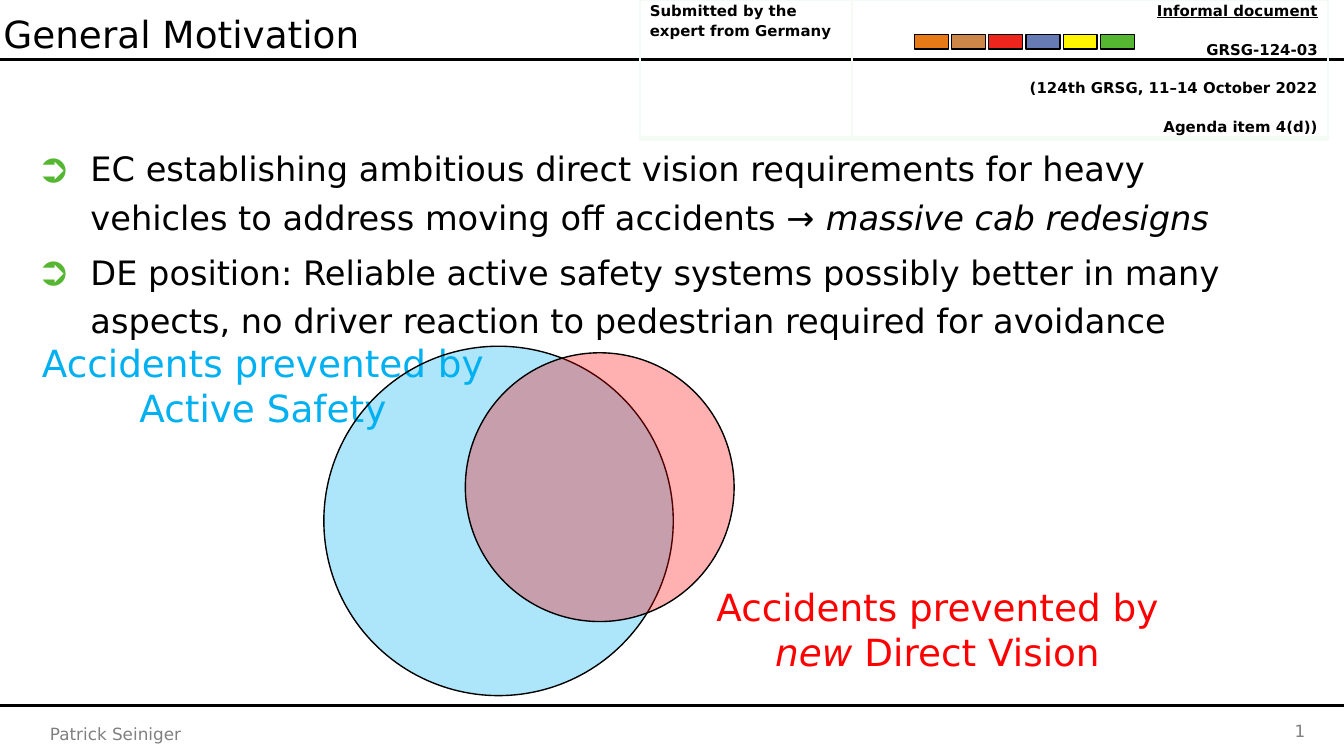
from dataclasses import dataclass

from lxml import etree
from pptx import Presentation
from pptx.dml.color import RGBColor
from pptx.enum.shapes import MSO_CONNECTOR as Connector, MSO_SHAPE as Preset
from pptx.enum.text import MSO_ANCHOR as Anchor, PP_ALIGN as Align
from pptx.oxml.ns import qn
from pptx.util import Pt

FONT = "DejaVu Sans"
BLACK, GRAY, BLUE, RED = "000000", "808080", "00B0F0", "FF0000"
GREEN, TABLE_EDGE = "55B631", "F4FAF4"
SLIDE_WIDTH, SLIDE_HEIGHT = 720, 405


@dataclass
class Run:
    text: str
    italic: bool = False
    underline: bool = False
    break_after: bool = False


@dataclass
class Style:
    size: float
    color: str = BLACK
    bold: bool = False
    align: Align = Align.LEFT
    line_spacing: float = 1.0
    space_after: float = 0


@dataclass
class TextBox:
    left: float
    top: float
    width: float
    height: float
    style: Style
    paragraphs: list[list[Run]]
    inset_left: float = 7.2
    wrap: bool = True
    bullet: str = ""


@dataclass
class Circle:
    left: float
    top: float
    diameter: float
    color: str
    opacity: int
    rotation: float = 0


def rgb(color: str) -> RGBColor:
    return RGBColor.from_string(color)


def add_runs(paragraph, runs: list[Run], style: Style) -> None:
    paragraph.alignment = style.align
    paragraph.line_spacing = style.line_spacing
    paragraph.space_after = Pt(style.space_after)
    for item in runs:
        run = paragraph.add_run()
        run.text = item.text
        run.font.name = FONT
        run.font.size = Pt(style.size)
        run.font.bold = style.bold
        run.font.italic = item.italic
        run.font.underline = item.underline
        run.font.color.rgb = rgb(style.color)
        if item.break_after:
            paragraph.add_line_break()


def set_indent(paragraph, left: float, first: float = 0) -> None:
    properties = paragraph._p.get_or_add_pPr()
    properties.set("marL", str(Pt(left)))
    properties.set("indent", str(Pt(first)))


def add_bullet(paragraph, character: str) -> None:
    set_indent(paragraph, 28.8, -28.8)
    properties = paragraph._p.get_or_add_pPr()
    color = etree.SubElement(properties, qn("a:buClr"))
    etree.SubElement(color, qn("a:srgbClr"), val=GREEN)
    etree.SubElement(properties, qn("a:buSzPct"), val="120000")
    etree.SubElement(properties, qn("a:buFont"), typeface=FONT)
    etree.SubElement(properties, qn("a:buChar"), char=character)


def next_paragraph(frame, index: int):
    return frame.add_paragraph() if index else frame.paragraphs[0]


def add_text(slide, box: TextBox) -> None:
    shape = slide.shapes.add_textbox(Pt(box.left), Pt(box.top), Pt(box.width), Pt(box.height))
    frame = shape.text_frame
    frame.word_wrap = box.wrap
    frame.vertical_anchor = Anchor.TOP
    frame.margin_left = Pt(box.inset_left)
    for index, runs in enumerate(box.paragraphs):
        paragraph = next_paragraph(frame, index)
        if box.bullet:
            add_bullet(paragraph, box.bullet)
            if index:
                paragraph.space_before = Pt(3.6)
        add_runs(paragraph, runs, box.style)


def add_rule(slide, top: float) -> None:
    rule = slide.shapes.add_connector(Connector.STRAIGHT, Pt(0), Pt(top), Pt(SLIDE_WIDTH), Pt(top))
    rule.line.color.rgb = rgb(BLACK)
    rule.line.width = Pt(1.5)
    etree.SubElement(rule._element.spPr, qn("a:effectLst"))


def add_outlined(slide, preset: Preset, left: float, top: float, width: float, height: float, color: str):
    shape = slide.shapes.add_shape(preset, Pt(left), Pt(top), Pt(width), Pt(height))
    shape.shadow.inherit = False
    shape.fill.solid()
    shape.fill.fore_color.rgb = rgb(color)
    shape.line.color.rgb = rgb(BLACK)
    shape.line.width = Pt(0.75)
    return shape


def add_circle(slide, circle: Circle) -> None:
    shape = add_outlined(slide, Preset.OVAL, circle.left, circle.top,
                         circle.diameter, circle.diameter, circle.color)
    shape.rotation = circle.rotation
    fill_color = shape._element.spPr.find(qn("a:solidFill")).find(qn("a:srgbClr"))
    etree.SubElement(fill_color, qn("a:alpha"), val=str(circle.opacity * 1000))


def add_borders(cell) -> None:
    properties = cell._tc.get_or_add_tcPr()
    for tag, width in (("a:lnL", 1), ("a:lnR", 1), ("a:lnT", 1), ("a:lnB", 3)):
        line = etree.SubElement(properties, qn(tag), w=str(Pt(width)))
        fill = etree.SubElement(line, qn("a:solidFill"))
        etree.SubElement(fill, qn("a:srgbClr"), val=TABLE_EDGE)


def add_document_table(slide) -> None:
    widths = (113.8, 254.9)
    submitted = [[Run("Submitted by the expert from Germany")]]
    document = [[Run("Informal document", underline=True)], [Run("GRSG-124-03")],
                [Run("(124th GRSG, 11–14 October 2022")], [Run("Agenda item 4(d))")]]
    columns = ((submitted, Align.LEFT, (0,)), (document, Align.RIGHT, (80, 80, 80, 108)))
    table = slide.shapes.add_table(1, 2, Pt(342.7), Pt(0), Pt(sum(widths)), Pt(73.4)).table
    table.first_row = table.horz_banding = False
    for index, (paragraphs, align, indents) in enumerate(columns):
        table.columns[index].width = Pt(widths[index])
        cell = table.cell(0, index)
        add_borders(cell)
        cell.fill.background()
        cell.margin_left = cell.margin_right = Pt(5.4)
        cell.margin_top = cell.margin_bottom = Pt(0)
        style = Style(8, bold=True, align=align, line_spacing=1.15, space_after=10)
        for row, (runs, indent) in enumerate(zip(paragraphs, indents)):
            paragraph = next_paragraph(cell.text_frame, row)
            set_indent(paragraph, indent)
            add_runs(paragraph, runs, style)


def main() -> None:
    presentation = Presentation()
    presentation.slide_width, presentation.slide_height = Pt(SLIDE_WIDTH), Pt(SLIDE_HEIGHT)
    slide = presentation.slides.add_slide(presentation.slide_layouts[6])

    # Header and footer
    for top in (31.7, 378):
        add_rule(slide, top)
    for index, color in enumerate(("E77917", "CC8648", "EE251D", "667AB3", "FFF500", "54B631")):
        add_outlined(slide, Preset.RECTANGLE, 489.9 + 19.92 * index, 18.5, 18.2, 7.7, color)
    add_text(slide, TextBox(547.2, 382.7, 159.1, 15, Style(9, GRAY, align=Align.RIGHT), [[Run("1")]]))
    add_text(slide, TextBox(19.7, 384.1, 119, 18, Style(9, GRAY), [[Run("Patrick Seiniger")]]))

    # Title and arguments
    add_text(slide, TextBox(1.8, -2.4, 563, 49.7, Style(20, line_spacing=1.2),
                            [[Run("General Motivation")]], inset_left=0))
    arguments = [
        [Run("EC establishing ambitious direct vision requirements for heavy vehicles "
             "to address moving off accidents → "), Run("massive cab redesigns", italic=True)],
        [Run("DE position: Reliable active safety systems possibly better in many aspects, "
             "no driver reaction to pedestrian required for avoidance")],
    ]
    add_text(slide, TextBox(19.7, 71.5, 664.6, 138.2, Style(18, line_spacing=1.2),
                            arguments, inset_left=0, bullet="➲"))

    # Overlapping accident sets and their labels
    prevented = Run("Accidents prevented by", break_after=True)
    add_text(slide, TextBox(12.9, 178.6, 256, 55.4, Style(20, BLUE, align=Align.CENTER),
                            [[prevented, Run("Active Safety")]], wrap=False))
    add_text(slide, TextBox(374.3, 309.6, 256, 55.4, Style(20, RED, align=Align.CENTER),
                            [[prevented, Run("new", italic=True), Run(" Direct Vision")]], wrap=False))
    add_circle(slide, Circle(173.5, 185.5, 187.2, BLUE, 32))
    add_circle(slide, Circle(249.3, 189, 144, RED, 31, rotation=327.3))

    add_document_table(slide)
    presentation.save("out.pptx")


if __name__ == "__main__":
    main()
